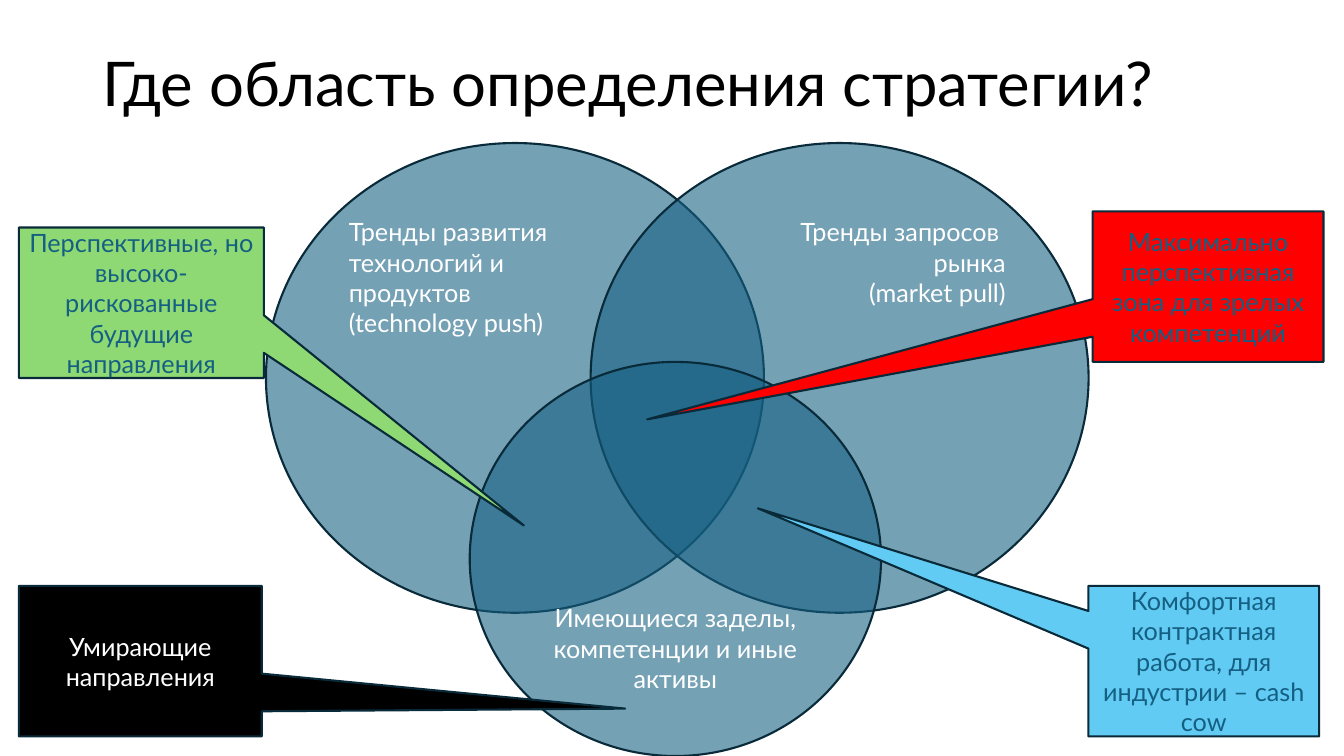
from pptx import Presentation
from pptx.dml.color import RGBColor
from pptx.enum.shapes import MSO_SHAPE
from pptx.enum.text import MSO_ANCHOR, PP_ALIGN
from pptx.oxml.ns import qn
from pptx.util import Pt
from lxml import etree

ELLIPSE, CALLOUT = MSO_SHAPE.OVAL, MSO_SHAPE.RECTANGULAR_CALLOUT
TOP, MIDDLE, BOTTOM = MSO_ANCHOR.TOP, MSO_ANCHOR.MIDDLE, MSO_ANCHOR.BOTTOM
LEFT, CENTER, RIGHT = PP_ALIGN.LEFT, PP_ALIGN.CENTER, PP_ALIGN.RIGHT

FONT = "Lato"
COLORS = {
    "black": "000000",
    "white": "FFFFFF",
    "teal": "156082",
    "outline": "092A39",
    "red": "FF0000",
    "blue": "61CBF4",
    "green": "8ED973",
}
CIRCLE_ALPHA = 59  # percent


def rgb(name):
    return RGBColor.from_string(COLORS[name])


def write(sp, lines, size, color, align, anchor):
    tf = sp.text_frame
    tf.word_wrap = True
    tf.vertical_anchor = anchor
    for i, line in enumerate(lines):
        p = tf.add_paragraph() if i else tf.paragraphs[0]
        p.alignment = align
        r = p.add_run()
        r.text = line
        r.font.name = FONT
        r.font.size = Pt(size)
        r.font.color.rgb = rgb(color)


def add_title(s, text):
    sp = s.shapes.add_textbox(Pt(66), Pt(9.4), Pt(828), Pt(104.4))
    write(sp, [text], 44, "black", LEFT, MIDDLE)
    sp.text_frame.paragraphs[0].line_spacing = 0.9


def add_outlined(s, kind, box, fill):
    sp = s.shapes.add_shape(kind, *map(Pt, box))
    sp.shadow.inherit = False
    sp.fill.solid()
    sp.fill.fore_color.rgb = rgb(fill)
    sp.line.color.rgb = rgb("outline")
    sp.line.width = Pt(1.5)
    return sp


def add_circle(s, box, lines, align, anchor):
    sp = add_outlined(s, ELLIPSE, box, "teal")
    clr = sp.fill._xPr.find(qn("a:solidFill"))[0]
    etree.SubElement(clr, qn("a:alpha"), val=str(CIRCLE_ALPHA * 1000))
    write(sp, lines, 18, "white", align, anchor)


def add_callout(s, box, tip, fill, color, text):
    """tip is the point of the wedge on the slide."""
    sp = add_outlined(s, CALLOUT, box, fill)
    x, y, w, h = box
    sp.adjustments[0] = (tip[0] - x) / w - 0.5
    sp.adjustments[1] = (tip[1] - y) / h - 0.5
    write(sp, [text], 18, color, CENTER, MIDDLE)


def main():
    prs = Presentation()
    prs.slide_width, prs.slide_height = Pt(960), Pt(540)
    s = prs.slides.add_slide(prs.slide_layouts[6])

    add_title(s, "Где область определения стратегии?")

    # Three overlapping circles
    add_circle(s, (190, 102.2, 355.7, 335.5),
               ["Тренды развития", "технологий и", "продуктов", "(technology push)"],
               LEFT, TOP)
    add_circle(s, (421.9, 102.2, 355.7, 335.5),
               ["Тренды запросов ", "рынка", "(market pull)"], RIGHT, TOP)
    add_circle(s, (335.5, 258.5, 293.8, 281.5),
               ["Имеющиеся заделы, компетенции и иные активы"], CENTER, BOTTOM)

    # Callouts pointing at the zones
    add_callout(s, (780.5, 151, 164.9, 107.5), (462.3, 299.6), "red", "teal",
                "Максимально перспективная зона для зрелых компетенций")
    add_callout(s, (777.4, 418.5, 164.9, 107.5), (541.3, 363.1), "blue", "teal",
                "Комфортная контрактная работа, для индустрии – cash cow")
    add_callout(s, (13.5, 162.5, 175, 107.5), (374.2, 375.4), "green", "teal",
                "Перспективные, но высоко-рискованные будущие направления")
    add_callout(s, (13.5, 418.5, 173.5, 107.5), (446.6, 506.2), "black", "white",
                "Умирающие направления")

    prs.save("out.pptx")


if __name__ == "__main__":
    main()
